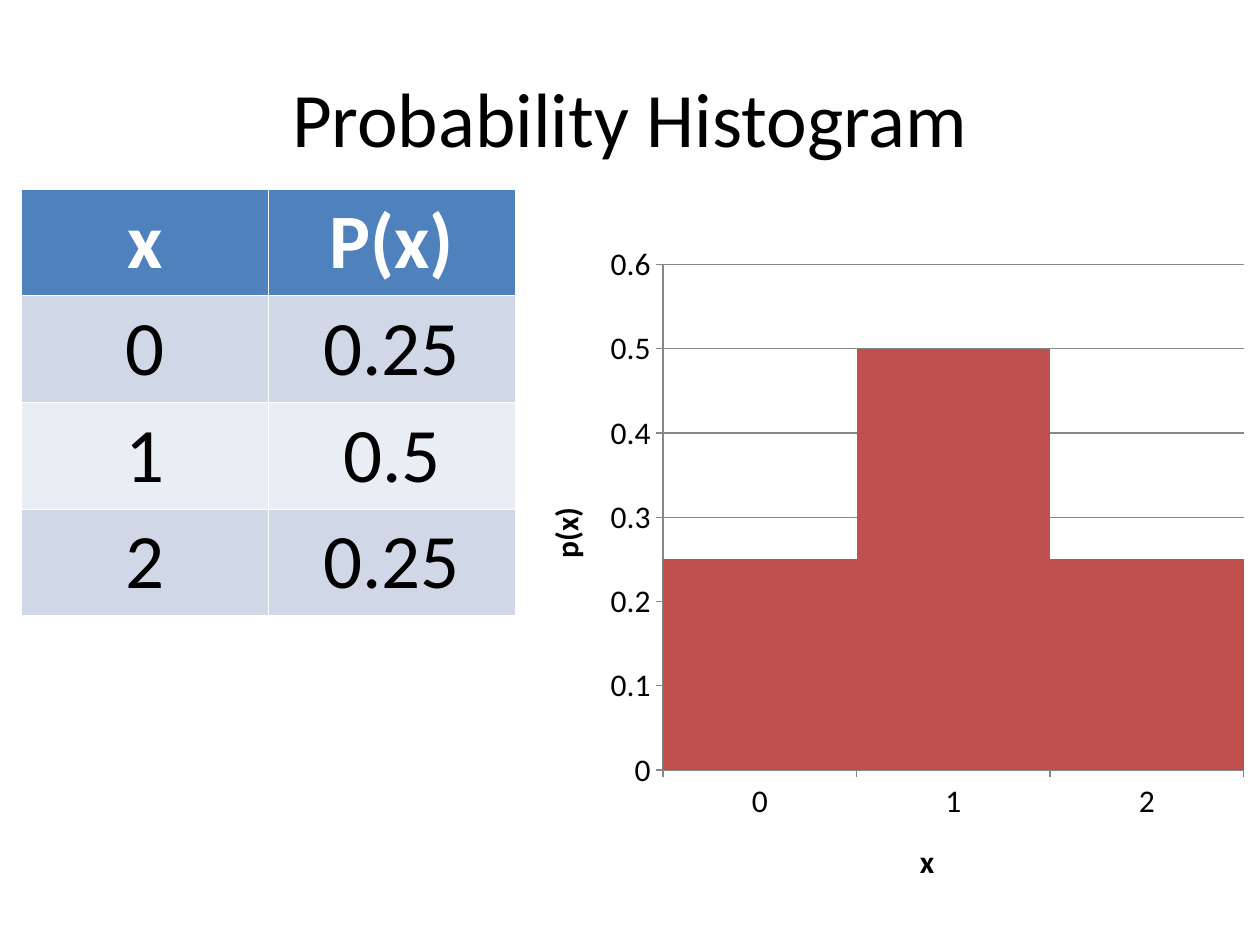
from dataclasses import dataclass

from lxml import etree
from pptx import Presentation
from pptx import util as u
from pptx.chart.data import CategoryChartData
from pptx.dml.color import RGBColor
from pptx.enum import chart as chart_enum
from pptx.enum import text as text_enum
from pptx.oxml.ns import qn


@dataclass(frozen=True)
class Theme:
    font: str = "Calibri"
    large: int = 44
    label: int = 18
    ink: str = "000000"
    header_ink: str = "FFFFFF"
    header_fill: str = "4F81BD"
    bands: tuple[str, str] = ("D0D8E8", "E9EDF4")
    bars: str = "C0504D"
    lines: str = "878787"


@dataclass(frozen=True)
class Box:
    left: float
    top: float
    width: float
    height: float

    def lengths(self) -> tuple[u.Length, ...]:
        return tuple(map(u.Inches, (self.left, self.top, self.width, self.height)))


@dataclass(frozen=True)
class Outcome:
    x: str
    probability: float


THEME = Theme()
OUTCOMES = (Outcome("0", 0.25), Outcome("1", 0.5), Outcome("2", 0.25))
TITLE_BOX = Box(0.5, 0.3, 9, 1.25)
TABLE_BOX = Box(0.17, 1.5, 3.92, 3.33)
CHART_BOX = Box(4.08, 1.83, 5.91, 5.42)
PLOT_SHARE = Box(0.2, 0.05, 0.78, 0.74)


def format_font(font, size: int, color: str = THEME.ink, bold: bool = False) -> None:
    font.name, font.size, font.bold = THEME.font, u.Pt(size), bold
    font.color.rgb = RGBColor.from_string(color)


def write_text(frame, words: str, *, size: int = THEME.large,
               color: str = THEME.ink, bold: bool = False) -> None:
    paragraph = frame.paragraphs[0]
    paragraph.alignment = text_enum.PP_ALIGN.CENTER
    run = paragraph.add_run()
    run.text = words
    format_font(run.font, size, color, bold)


def add_title(slide, words: str) -> None:
    title = slide.shapes.title
    title.left, title.top, title.width, title.height = TITLE_BOX.lengths()
    title.text_frame.vertical_anchor = text_enum.MSO_ANCHOR.MIDDLE
    write_text(title.text_frame, words)


def add_probability_table(slide) -> None:
    rows = [("x", "P(x)")] + [(item.x, str(item.probability)) for item in OUTCOMES]
    table = slide.shapes.add_table(len(rows), 2, *TABLE_BOX.lengths()).table
    for row_index, row in enumerate(rows):
        is_header = row_index == 0
        fill = THEME.header_fill if is_header else THEME.bands[(row_index - 1) % 2]
        for column_index, words in enumerate(row):
            cell = table.cell(row_index, column_index)
            cell.fill.solid()
            cell.fill.fore_color.rgb = RGBColor.from_string(fill)
            write_text(cell.text_frame, words, bold=is_header,
                       color=THEME.header_ink if is_header else THEME.ink)


def format_axis(axis, title: str) -> None:
    write_text(axis.axis_title.text_frame, title, size=THEME.label, bold=True)
    format_font(axis.tick_labels.font, THEME.label)
    axis.major_tick_mark = chart_enum.XL_TICK_MARK.OUTSIDE
    axis.format.line.color.rgb = RGBColor.from_string(THEME.lines)
    axis.format.line.width = u.Pt(0.75)


def place_plot(chart, share: Box) -> None:
    """Fix the inner plot area, in shares of the chart's size."""
    plot_area = chart.plots[0]._element.getparent()
    for old_layout in plot_area.findall(qn("c:layout")):
        plot_area.remove(old_layout)
    layout = etree.Element(qn("c:layout"))
    manual = etree.SubElement(layout, qn("c:manualLayout"))
    settings = (("layoutTarget", "inner"), ("xMode", "edge"), ("yMode", "edge"),
                ("x", share.left), ("y", share.top), ("w", share.width), ("h", share.height))
    for name, value in settings:
        etree.SubElement(manual, qn(f"c:{name}")).set("val", str(value))
    plot_area.insert(0, layout)


def add_histogram(slide) -> None:
    data = CategoryChartData()
    data.categories = [item.x for item in OUTCOMES]
    data.add_series("Series 1", [item.probability for item in OUTCOMES])
    chart = slide.shapes.add_chart(
        chart_enum.XL_CHART_TYPE.COLUMN_CLUSTERED, *CHART_BOX.lengths(), data).chart
    chart.has_legend = False
    chart.has_title = False
    format_font(chart.font, THEME.label)
    plot = chart.plots[0]
    plot.gap_width = 0
    plot.vary_by_categories = False
    bars = plot.series[0].format.fill
    bars.solid()
    bars.fore_color.rgb = RGBColor.from_string(THEME.bars)
    format_axis(chart.category_axis, "x")
    value_axis = chart.value_axis
    format_axis(value_axis, "p(x)")
    value_axis.minimum_scale, value_axis.maximum_scale = 0, 0.6
    value_axis.major_unit = 0.1
    value_axis.has_major_gridlines = True
    grid_line = value_axis.major_gridlines.format.line
    grid_line.color.rgb = RGBColor.from_string(THEME.lines)
    grid_line.width = u.Pt(0.75)
    place_plot(chart, PLOT_SHARE)


def main() -> None:
    presentation = Presentation()
    presentation.slide_width, presentation.slide_height = u.Inches(10), u.Inches(7.5)
    slide = presentation.slides.add_slide(presentation.slide_layouts.get_by_name("Title Only"))
    add_title(slide, "Probability Histogram")
    add_probability_table(slide)
    add_histogram(slide)
    presentation.save("out.pptx")


if __name__ == "__main__":
    main()
